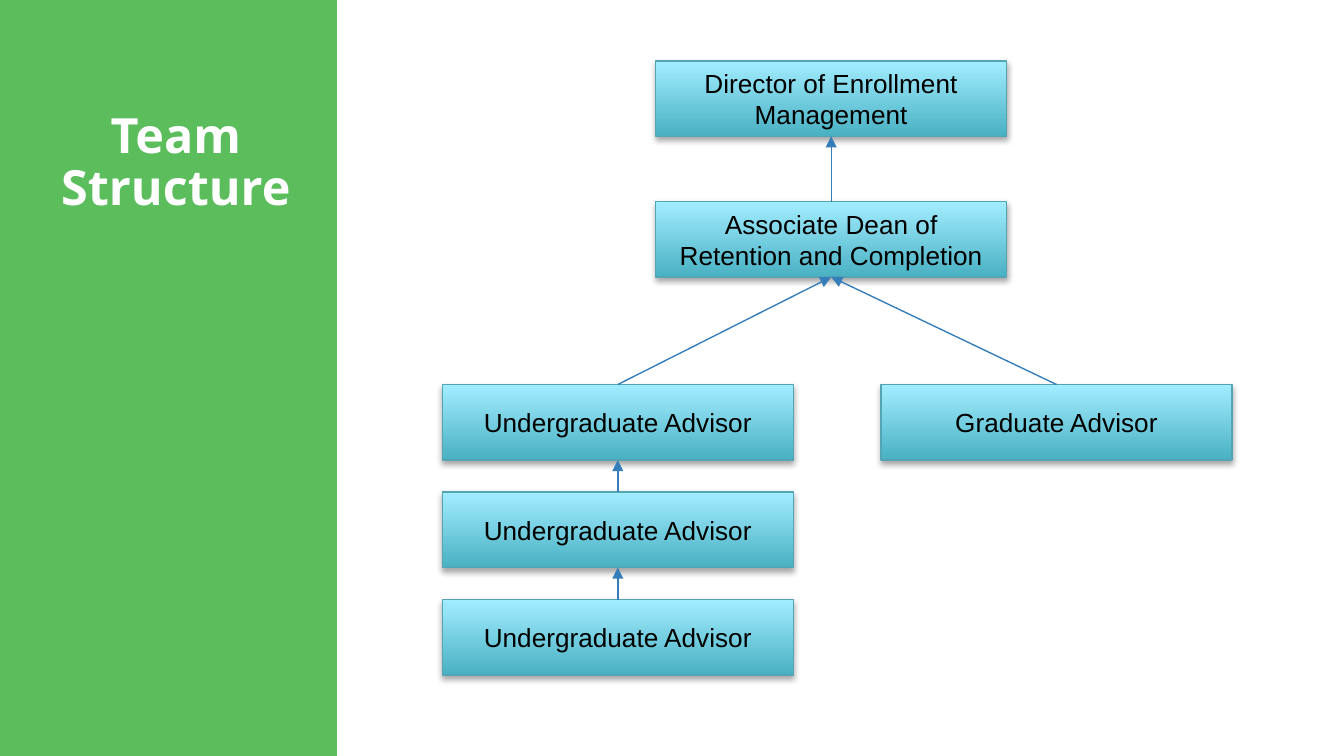
from lxml.etree import SubElement
from pptx import Presentation
from pptx.dml.color import RGBColor
from pptx.enum.shapes import MSO_CONNECTOR, MSO_SHAPE
from pptx.enum.text import MSO_ANCHOR, MSO_AUTO_SIZE, PP_ALIGN
from pptx.oxml.ns import qn
from pptx.util import Pt

# Content: key -> (text, column, row)
TITLE = "Team Structure"
ROLES = {
    "dean": ("Associate Dean of Retention and Completion", "middle", "dean"),
    "director": ("Director of Enrollment Management", "middle", "director"),
    "undergraduate 1": ("Undergraduate Advisor", "left", 0),
    "graduate": ("Graduate Advisor", "right", 0),
    "undergraduate 2": ("Undergraduate Advisor", "left", 1),
    "undergraduate 3": ("Undergraduate Advisor", "left", 2),
}
REPORTS_TO = [
    ("undergraduate 3", "undergraduate 2"),
    ("undergraduate 2", "undergraduate 1"),
    ("undergraduate 1", "dean"),
    ("graduate", "dean"),
    ("dean", "director"),
]

# Layout in points
SLIDE_WIDTH, SLIDE_HEIGHT = 720, 405
PANEL_WIDTH = 180.5
BOX_WIDTH, BOX_HEIGHT = 188, 40.4
COLUMNS = {"left": 237, "middle": 351.3, "right": 472}
ADVISOR_TOP, ADVISOR_STEP = 206, 57.6
ROWS = {"director": 32.6, "dean": 108}
ROWS.update({row: ADVISOR_TOP + row * ADVISOR_STEP for row in range(3)})

GREEN = RGBColor(0x5B, 0xBD, 0x5C)
TEAL = RGBColor(0x49, 0xB1, 0xC3)
PALE_BLUE = RGBColor(0xA2, 0xED, 0xFF)
BORDER = RGBColor(0x53, 0xA5, 0xB3)
ARROW = RGBColor(0x36, 0x7E, 0xB9)
WHITE = RGBColor(0xFF, 0xFF, 0xFF)
BLACK = RGBColor(0, 0, 0)


def add_text(frame, text, font_name, size, color, bold=False):
    frame.word_wrap = True
    para = frame.paragraphs[0]
    para.alignment = PP_ALIGN.CENTER
    span = para.add_run()
    span.text = text
    span.font.name = font_name
    span.font.size = Pt(size)
    span.font.bold = bold
    span.font.color.rgb = color
    return para


def add_soft_shadow(shape):
    effects = SubElement(shape._element.spPr, qn("a:effectLst"))
    shadow = SubElement(effects, qn("a:outerShdw"), blurRad=str(Pt(3.1)),
                        dist=str(Pt(1.8)), dir="5400000", rotWithShape="0")
    color = SubElement(shadow, qn("a:srgbClr"), val="000000")
    SubElement(color, qn("a:alpha"), val="35000")


def add_role(page, text, column, row):
    box = page.shapes.add_shape(MSO_SHAPE.RECTANGLE, Pt(COLUMNS[column]), Pt(ROWS[row]),
                                Pt(BOX_WIDTH), Pt(BOX_HEIGHT))
    box.fill.gradient()
    box.fill.gradient_angle = 90
    for stop, color in zip(box.fill.gradient_stops, (TEAL, PALE_BLUE)):
        stop.color.rgb = color
    box.line.color.rgb = BORDER
    box.line.width = Pt(0.75)
    add_soft_shadow(box)
    box.text_frame.vertical_anchor = MSO_ANCHOR.MIDDLE
    add_text(box.text_frame, text, "Arial", 14, BLACK)
    return box


def add_arrow(page, lower, upper):
    arrow = page.shapes.add_connector(MSO_CONNECTOR.STRAIGHT, 0, 0, 0, 0)
    arrow.begin_connect(lower, 0)
    arrow.end_connect(upper, 2)
    arrow.line.color.rgb = ARROW
    arrow.line.width = Pt(0.75)
    SubElement(arrow.line._get_or_add_ln(), qn("a:tailEnd"), type="triangle")
    SubElement(arrow._element.spPr, qn("a:effectLst"))


deck = Presentation()
deck.slide_width, deck.slide_height = Pt(SLIDE_WIDTH), Pt(SLIDE_HEIGHT)
page = deck.slides.add_slide(deck.slide_layouts[5])

# Side panel, placed behind the title
panel = page.shapes.add_shape(MSO_SHAPE.RECTANGLE, 0, 0, Pt(PANEL_WIDTH), Pt(SLIDE_HEIGHT))
panel.fill.solid()
panel.fill.fore_color.rgb = GREEN
panel.line.fill.background()
panel.shadow.inherit = False
page.shapes._spTree.insert(2, panel._element)

# Title
title = page.shapes.title
title.left, title.top, title.width, title.height = Pt(0), Pt(52.6), Pt(180), Pt(82)
frame = title.text_frame
frame.auto_size = MSO_AUTO_SIZE.NONE
frame.vertical_anchor = MSO_ANCHOR.TOP
frame.margin_left = frame.margin_right = frame.margin_top = frame.margin_bottom = Pt(7.2)
para = add_text(frame, TITLE, "Open Sans", 26, WHITE, bold=True)
para.space_before = Pt(6)
para.line_spacing = 0.9
para._p.get_or_add_pPr().set("marL", str(Pt(8.6)))

# Organisation chart
boxes = {key: add_role(page, *role) for key, role in ROLES.items()}
for lower, upper in REPORTS_TO:
    add_arrow(page, boxes[lower], boxes[upper])

deck.save("out.pptx")
